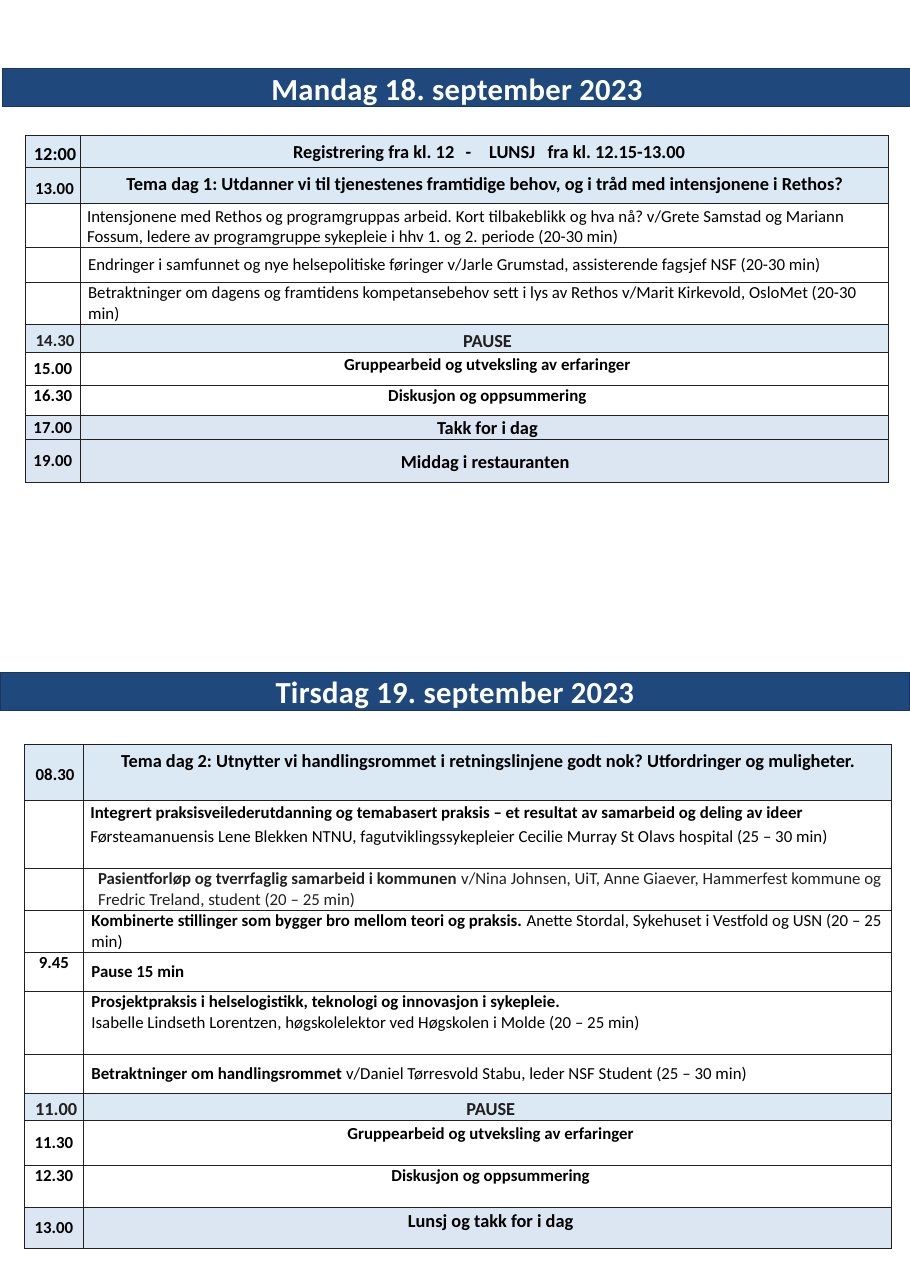
from dataclasses import dataclass

from lxml import etree
from pptx import Presentation
from pptx.dml.color import RGBColor
from pptx.enum.shapes import MSO_SHAPE
from pptx.enum.text import MSO_ANCHOR, PP_ALIGN
from pptx.oxml.ns import qn
from pptx.util import Inches, Pt

TOP, MIDDLE = MSO_ANCHOR.TOP, MSO_ANCHOR.MIDDLE
LEFT, CENTER = PP_ALIGN.LEFT, PP_ALIGN.CENTER
RECTANGLE = MSO_SHAPE.RECTANGLE

FONT = "Calibri"
COLORS = {
    "banner": "1F497D", "banner_edge": "17375E", "white": "FFFFFF",
    "sky": "DBE9F5", "mist": "DCE6F2", "border": "202022",
    "black": "000000", "soft": "202022", "pause": "231F20",
}

# The page is a grid of 0.01 inch squares
GRID_COLUMNS, GRID_ROWS = 826, 1169
BANNER_ROWS = 35


@dataclass
class Span:
    text: str
    bold: bool = True
    size: float = 11
    color: str = "black"
    spacing: float = 0


@dataclass
class Entry:
    """Contents of one cell: paragraphs of spans and their placing."""
    paras: list[list[Span]]
    align: int = CENTER
    anchor: int = MIDDLE
    left: int = 0
    right: int = 0
    top: int = 0
    gap: float = 0


@dataclass
class Row:
    height: int
    time: Entry
    content: Entry
    fill: str = "white"


@dataclass
class Day:
    title: str
    banner_left: int
    banner_top: int
    table_left: int
    table_top: int
    columns: tuple[int, int]
    rows: list[Row]


def grid(count: float) -> int:
    return Inches(count / 100)


def rgb(name: str) -> RGBColor:
    return RGBColor.from_string(COLORS[name])


# Kinds of entries
def clock(text: str, size: float = 11, color: str = "black", **place) -> Entry:
    return Entry([[Span(text, size=size, color=color)]], **place)


def heading(text: str, size: float = 12, color: str = "black", **place) -> Entry:
    return Entry([[Span(text, size=size, color=color)]], **{"anchor": TOP, **place})


def talk(*paras: list[Span], **place) -> Entry:
    return Entry(list(paras), **{"align": LEFT, "left": 7, "right": 7, **place})


def plain(text: str, color: str = "black") -> Span:
    return Span(text, bold=False, color=color)


def pause_row(time: str, size: float) -> Row:
    return Row(25, clock(time, size, "pause", left=4, top=5),
               heading("PAUSE", color="pause", left=6, top=5), "sky")


def group_work_rows(first: str, second: str, heights: tuple[int, int]) -> list[Row]:
    return [
        Row(heights[0], clock(first),
            heading("Gruppearbeid og utveksling av erfaringer", 11, left=6, top=2)),
        Row(heights[1], clock(second, anchor=TOP),
            heading("Diskusjon og oppsummering", 11, left=6)),
    ]


# Drawing
def write_paras(frame, entry: Entry) -> None:
    for index, spans in enumerate(entry.paras):
        para = frame.paragraphs[0] if index == 0 else frame.add_paragraph()
        para.alignment = entry.align
        if index:
            para.space_before = Pt(entry.gap)
        for span in spans:
            run = para.add_run()
            run.text = span.text
            run.font.name = FONT
            run.font.size = Pt(span.size)
            run.font.bold = span.bold
            run.font.color.rgb = rgb(span.color)
            if span.spacing:
                run.font._element.set("spc", str(round(span.spacing * 100)))
        if not spans:
            etree.SubElement(para._p, qn("a:endParaRPr"), sz="1100")


def draw_borders(cell) -> None:
    properties = cell._tc.get_or_add_tcPr()
    for index, side in enumerate(("a:lnL", "a:lnR", "a:lnT", "a:lnB")):
        line = etree.Element(qn(side), w=str(Pt(0.5)))
        solid = etree.SubElement(line, qn("a:solidFill"))
        etree.SubElement(solid, qn("a:srgbClr"), val=COLORS["border"])
        properties.insert(index, line)


def draw_cell(cell, entry: Entry, fill: str) -> None:
    cell.margin_left, cell.margin_right = grid(entry.left), grid(entry.right)
    cell.margin_top, cell.margin_bottom = grid(entry.top), 0
    cell.vertical_anchor = entry.anchor
    cell.fill.solid()
    cell.fill.fore_color.rgb = rgb(fill)
    draw_borders(cell)
    write_paras(cell.text_frame, entry)


def draw_banner(page, day: Day) -> None:
    box = page.shapes.add_shape(RECTANGLE, grid(day.banner_left), grid(day.banner_top),
                                grid(GRID_COLUMNS), grid(BANNER_ROWS))
    box.shadow.inherit = False
    box.fill.solid()
    box.fill.fore_color.rgb = rgb("banner")
    box.line.color.rgb = rgb("banner_edge")
    box.line.width = Pt(0.75)
    frame = box.text_frame
    frame.word_wrap = True
    frame.vertical_anchor = TOP
    frame.margin_left = frame.margin_right = frame.margin_bottom = 0
    frame.margin_top = grid(1)
    write_paras(frame, Entry([[Span(day.title, size=20, color="white", spacing=0.2)]]))


def draw_program(page, day: Day) -> None:
    height = sum(row.height for row in day.rows)
    table = page.shapes.add_table(len(day.rows), 2, grid(day.table_left), grid(day.table_top),
                                  grid(sum(day.columns)), grid(height)).table
    table.first_row = table.horz_banding = False
    for column, width in zip(table.columns, day.columns):
        column.width = grid(width)
    for index, row in enumerate(day.rows):
        table.rows[index].height = grid(row.height)
        draw_cell(table.cell(index, 0), row.time, row.fill)
        draw_cell(table.cell(index, 1), row.content, row.fill)


EMPTY = Entry([[]])
LUNCH = Entry([[Span("Registrering fra kl. 12", size=12), Span(" - ", size=12, spacing=4.5),
                Span("LUNSJ", size=12), Span(" ", size=12, spacing=5.4),
                Span("fra kl. 12.15-13.00", size=12)]], anchor=TOP, left=9, top=5)

MONDAY = Day("Mandag 18. september 2023", 2, 62, 23, 123, (50, 733), [
    Row(29, clock("12:00", 12, left=4, top=5), LUNCH, "sky"),
    Row(33, clock("13.00", left=3, top=5),
        heading("Tema dag 1: Utdanner vi til tjenestenes framtidige behov, og i tråd med "
                "intensjonene i Rethos?", left=2, top=5), "sky"),
    Row(39, EMPTY, talk([plain(
        "Intensjonene med Rethos og programgruppas arbeid. Kort tilbakeblikk og hva nå? "
        "v/Grete Samstad og Mariann Fossum, ledere av programgruppe sykepleie i hhv 1. og "
        "2. periode (20-30 min)")], left=6, right=0, top=2)),
    Row(32, EMPTY, talk([plain(
        "Endringer i samfunnet og nye helsepolitiske føringer v/Jarle Grumstad, "
        "assisterende fagsjef NSF (20-30 min)")])),
    Row(37, EMPTY, talk([plain(
        "Betraktninger om dagens og framtidens kompetansebehov sett i lys av Rethos "
        "v/Marit Kirkevold, OsloMet (20-30 min)")])),
    pause_row("14.30", 11),
    *group_work_rows("15.00", "16.30", (30, 27)),
    Row(22, clock("17.00"), heading("Takk for i dag", left=6, top=2), "mist"),
    Row(39, clock("19.00"),
        heading("Middag i restauranten", anchor=MIDDLE, left=2, top=2), "mist"),
])

TUESDAY = Day("Tirsdag 19. september 2023", 0, 610, 22, 676, (54, 733), [
    Row(50, clock("08.30", left=2, top=5),
        heading("Tema dag 2: Utnytter vi handlingsrommet i retningslinjene godt nok? "
                "Utfordringer og muligheter.", left=2, top=5), "sky"),
    Row(62, EMPTY, talk(
        [Span("Integrert praksisveilederutdanning og temabasert praksis – et resultat av "
              "samarbeid og deling av ideer")],
        [plain("Førsteamanuensis Lene Blekken NTNU, fagutviklingssykepleier Cecilie Murray "
               "St Olavs hospital (25 – 30 min)")],
        anchor=TOP, left=6, right=0, top=2, gap=2.2)),
    Row(38, EMPTY, talk(
        [Span("Pasientforløp og tverrfaglig samarbeid i kommunen ", color="soft"),
         plain("v/Nina Johnsen, UiT, Anne Giaever, Hammerfest kommune og Fredric Treland, "
               "student (20 – 25 min)", "soft")], left=13)),
    Row(38, EMPTY, talk(
        [Span("Kombinerte stillinger som bygger bro mellom teori og praksis. "),
         plain("Anette Stordal, Sykehuset i Vestfold og USN (20 – 25 min)")])),
    Row(36, clock("9.45", anchor=TOP), talk([Span("Pause 15 min")])),
    Row(57, EMPTY, talk(
        [Span("Prosjektpraksis i helselogistikk, teknologi og innovasjon i sykepleie.")],
        [plain("Isabelle Lindseth Lorentzen, høgskolelektor ved Høgskolen i Molde "
               "(20 – 25 min)")], anchor=TOP)),
    Row(35, EMPTY, talk([Span("Betraktninger om handlingsrommet "), plain(
        "v/Daniel Tørresvold Stabu, leder NSF Student (25 – 30 min)")])),
    pause_row("11.00", 12),
    *group_work_rows("11.30", "12.30", (40, 39)),
    Row(37, clock("13.00"), heading("Lunsj og takk for i dag", left=6, top=2), "mist"),
])


def main() -> None:
    deck = Presentation()
    deck.slide_width, deck.slide_height = grid(GRID_COLUMNS), grid(GRID_ROWS)
    page = deck.slides.add_slide(deck.slide_layouts[6])
    for day in (MONDAY, TUESDAY):
        draw_banner(page, day)
        draw_program(page, day)
    deck.save("out.pptx")


if __name__ == "__main__":
    main()
